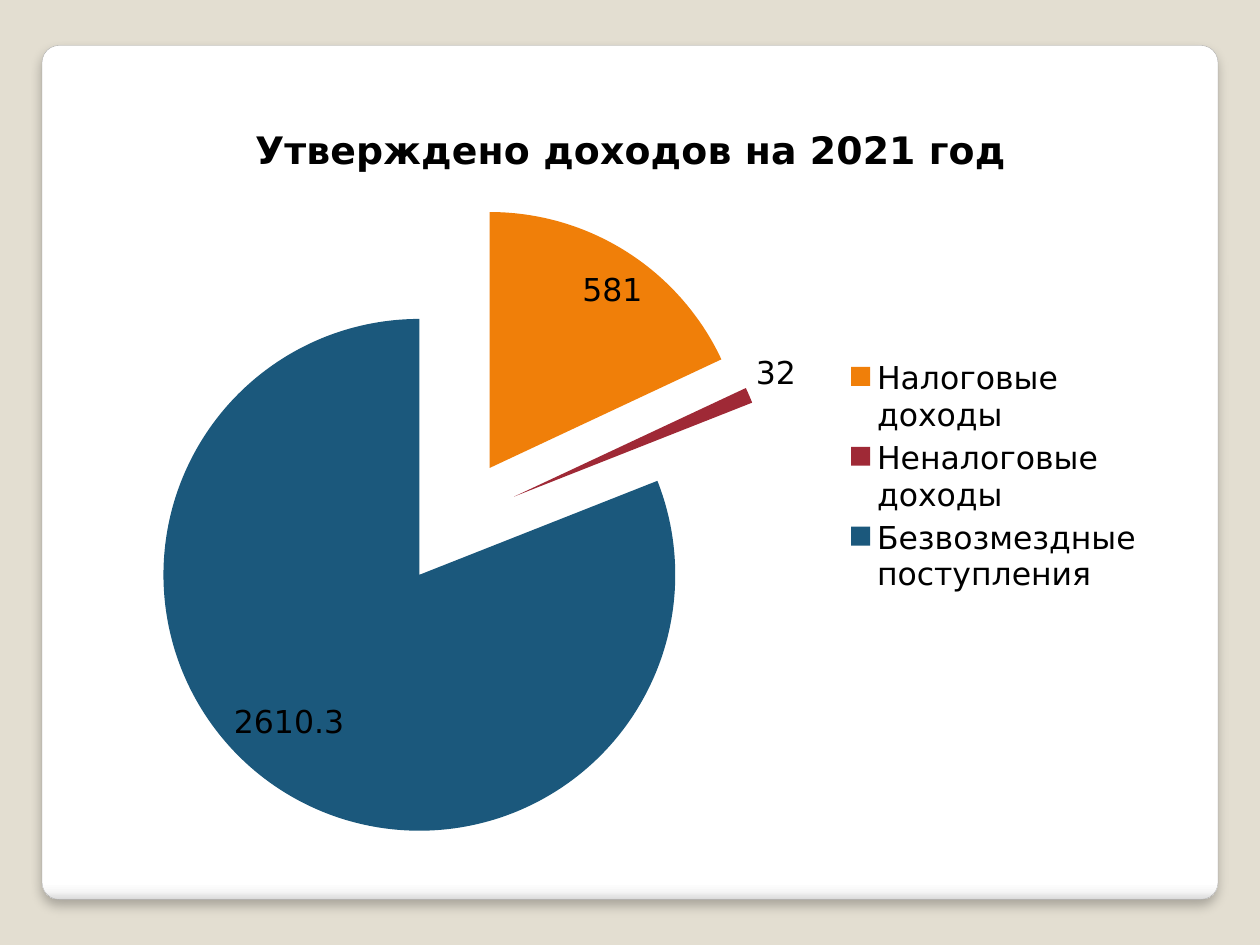
import pptx
import pptx.chart.data
import pptx.dml.color
import pptx.enum.chart
import pptx.enum.shapes
import pptx.oxml
import pptx.oxml.ns
import pptx.util

Pt = pptx.util.Pt
FONT = "DejaVu Sans"
INCOME = [
    ("Налоговые доходы", 581, "F07F09"),
    ("Неналоговые доходы", 32, "9F2936"),
    ("Безвозмездные поступления", 2610.3, "1B587C"),
]
PANEL_STOPS = [(0, "FFFFFF"), (98, "FFFFFF"), (99, "F7F7F7"), (100, "DADADA")]


def color(hex_text):
    return pptx.dml.color.RGBColor.from_string(hex_text)


def format_font(font, size, bold=False):
    font.name = FONT
    font.size = Pt(size)
    font.bold = bold
    font.color.rgb = color("000000")


def parse_xml(tag, attributes, content):
    namespaces = pptx.oxml.ns.nsdecls(tag.split(":")[0])
    return pptx.oxml.parse_xml(f"<{tag} {namespaces} {attributes}>{content}</{tag}>")


def add_panel(slide):
    panel = slide.shapes.add_shape(
        pptx.enum.shapes.MSO_SHAPE.ROUNDED_RECTANGLE,
        Pt(24), Pt(26), Pt(672), Pt(488))
    panel.adjustments[0] = 0.02
    panel.line.color.rgb = color("A4A4A4")
    panel.line.width = Pt(0.16)

    # Vertical gradient that darkens at the bottom edge
    stops = "".join(
        f'<a:gs pos="{position * 1000}"><a:srgbClr val="{hex_text}"/></a:gs>'
        for position, hex_text in PANEL_STOPS)
    gradient = parse_xml(
        "a:gradFill", 'rotWithShape="1"',
        f'<a:gsLst>{stops}</a:gsLst><a:lin ang="5400000" scaled="0"/>')
    properties = panel.element.spPr
    properties.insert(2, gradient)

    # Soft shadow below the panel
    properties.append(parse_xml(
        "a:effectLst", "",
        f'<a:outerShdw blurRad="{Pt(6)}" dist="{Pt(4)}" dir="5400000" rotWithShape="0">'
        '<a:srgbClr val="000000"><a:alpha val="25000"/></a:srgbClr></a:outerShdw>'))


def add_income_chart(slide):
    data = pptx.chart.data.CategoryChartData()
    data.categories = [name for name, _, _ in INCOME]
    data.add_series("Series 1", [value for _, value, _ in INCOME])
    chart = slide.shapes.add_chart(
        pptx.enum.chart.XL_CHART_TYPE.PIE,
        Pt(60), Pt(54.5), Pt(601), Pt(436.5), data).chart
    format_font(chart.font, 18)

    # Title
    chart.has_title = True
    run = chart.chart_title.text_frame.paragraphs[0].add_run()
    run.text = "Утверждено доходов на 2021 год"
    format_font(run.font, 21.6, bold=True)

    # Legend
    chart.has_legend = True
    chart.legend.position = pptx.enum.chart.XL_LEGEND_POSITION.RIGHT
    chart.legend.include_in_layout = False
    format_font(chart.legend.font, 18)

    # Slices, pulled apart
    plot = chart.plots[0]
    plot.vary_by_categories = True
    series = plot.series[0]
    for index, (_, _, hex_text) in enumerate(INCOME):
        fill = series.points[index].format.fill
        fill.solid()
        fill.fore_color.rgb = color(hex_text)
    first_point = series._element.find(pptx.oxml.ns.qn("c:dPt"))
    first_point.addprevious(parse_xml("c:explosion", 'val="25"', ""))

    # Value labels
    labels = series.data_labels
    labels.show_value = True
    labels.position = pptx.enum.chart.XL_LABEL_POSITION.BEST_FIT
    format_font(labels.font, 18)


def main():
    presentation = pptx.Presentation()
    presentation.slide_width = Pt(720)
    presentation.slide_height = Pt(540)
    slide = presentation.slides.add_slide(presentation.slide_layouts[6])
    slide.background.fill.solid()
    slide.background.fill.fore_color.rgb = color("E3DED1")
    add_panel(slide)
    add_income_chart(slide)
    presentation.save("out.pptx")


if __name__ == "__main__":
    main()
